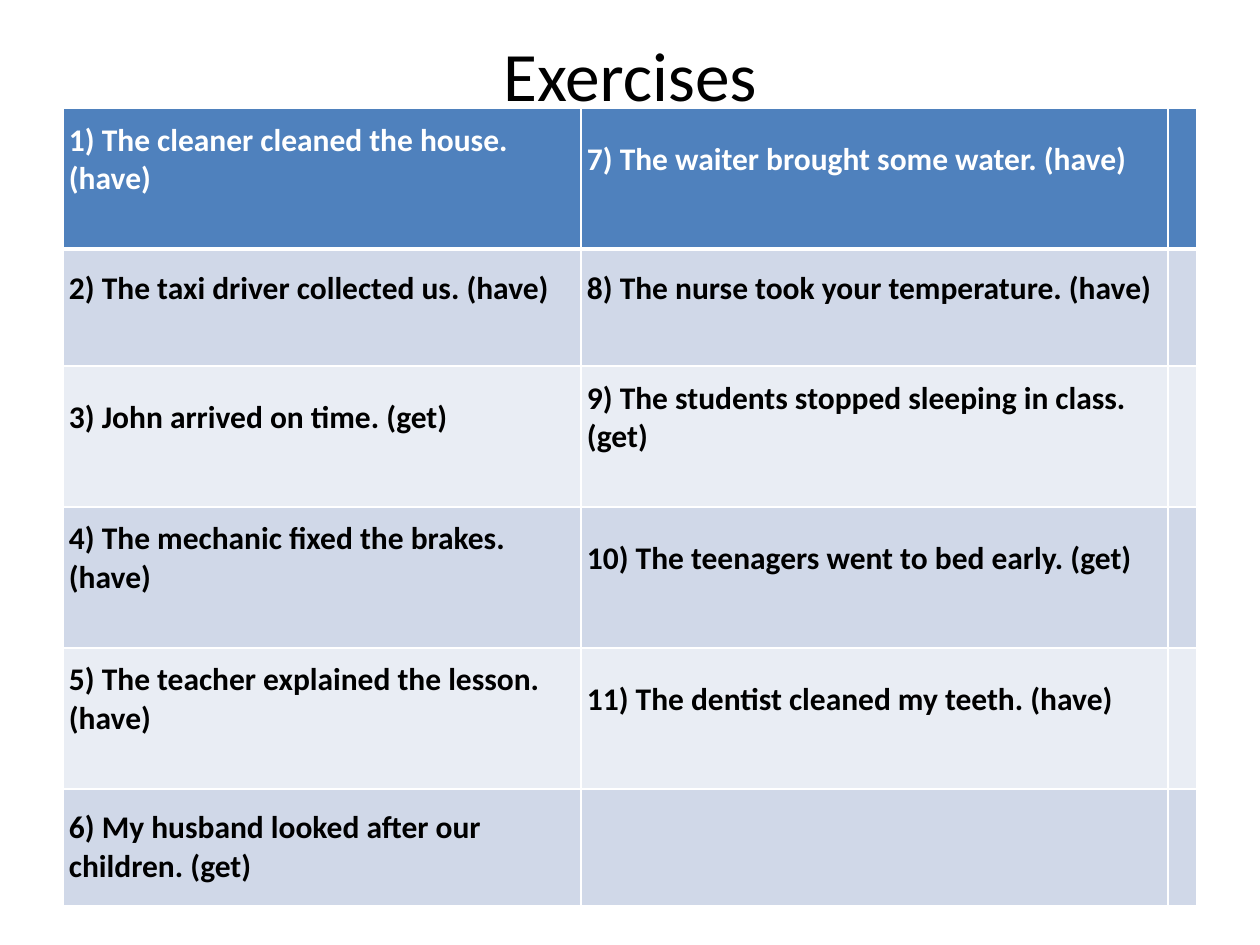
import lxml.etree
import pptx
import pptx.dml.color
import pptx.enum.text
import pptx.oxml.ns
import pptx.util

TITLE = "Exercises"
EXERCISES = [
    ("1) The cleaner cleaned the house. (have)", "7) The waiter brought some water. (have)", ""),
    ("2) The taxi driver collected us. (have)", "8) The nurse took your temperature. (have)", ""),
    ("3) John arrived on time. (get)", "9) The students stopped sleeping in class. (get)", ""),
    ("4) The mechanic fixed the brakes. (have)", "10) The teenagers went to bed early. (get)", ""),
    ("5) The teacher explained the lesson. (have)", "11) The dentist cleaned my teeth. (have)", ""),
    ("6) My husband looked after our children. (get)", "", ""),
]

# Lengths in px, 126 to the inch
SCALE = 914400 / 126
SLIDE_SIZE = (1260, 945)
TITLE_BOX = (63, 38, 1134, 71)
TABLE_LEFT, TABLE_TOP = 63, 108
COLUMN_WIDTHS = [518, 587, 29]
ROW_HEIGHTS = [141, 117, 141, 141, 141, 117]
CELL_MARGIN = 6
LINE_GAP = 38  # one line of free space below the text

BLACK = pptx.dml.color.RGBColor(0x00, 0x00, 0x00)
WHITE = pptx.dml.color.RGBColor(0xFF, 0xFF, 0xFF)
HEADER_BLUE = pptx.dml.color.RGBColor(0x4F, 0x81, 0xBD)
BANDS = [
    pptx.dml.color.RGBColor(0xE9, 0xED, 0xF4),
    pptx.dml.color.RGBColor(0xD0, 0xD8, 0xE8),
]


def px(length):
    return pptx.util.Emu(round(length * SCALE))


def write_text(frame, text, size, color, bold=False, alignment=pptx.enum.text.PP_ALIGN.LEFT):
    paragraph = frame.paragraphs[0]
    paragraph.alignment = alignment
    run = paragraph.add_run()
    run.text = text
    run.font.name = "Calibri"
    run.font.size = pptx.util.Pt(size)
    run.font.bold = bold
    run.font.color.rgb = color


def set_borders(cell, widths):
    """Give the cell white borders; widths maps side tags to points."""
    properties = cell._tc.get_or_add_tcPr()
    for index, (tag, width) in enumerate(widths.items()):
        line = lxml.etree.Element(pptx.oxml.ns.qn(f"a:{tag}"), w=str(pptx.util.Pt(width)))
        fill = lxml.etree.SubElement(line, pptx.oxml.ns.qn("a:solidFill"))
        lxml.etree.SubElement(fill, pptx.oxml.ns.qn("a:srgbClr"), val=str(WHITE))
        properties.insert(index, line)


def add_title(slide):
    title = slide.shapes.title
    title.left, title.top, title.width, title.height = map(px, TITLE_BOX)
    frame = title.text_frame
    frame.auto_size = pptx.enum.text.MSO_AUTO_SIZE.NONE
    frame.vertical_anchor = pptx.enum.text.MSO_ANCHOR.MIDDLE
    write_text(frame, TITLE, size=39.6, color=BLACK, alignment=pptx.enum.text.PP_ALIGN.CENTER)


def add_exercise_table(slide):
    table = slide.shapes.add_table(
        len(ROW_HEIGHTS), len(COLUMN_WIDTHS), px(TABLE_LEFT), px(TABLE_TOP),
        px(sum(COLUMN_WIDTHS)), px(sum(ROW_HEIGHTS)),
    ).table
    for column, width in zip(table.columns, COLUMN_WIDTHS):
        column.width = px(width)
    last_row = len(EXERCISES) - 1
    for row_index, texts in enumerate(EXERCISES):
        table.rows[row_index].height = px(ROW_HEIGHTS[row_index])
        is_header = row_index == 0
        for column_index, text in enumerate(texts):
            cell = table.cell(row_index, column_index)
            cell.fill.solid()
            cell.fill.fore_color.rgb = HEADER_BLUE if is_header else BANDS[row_index % 2]
            cell.vertical_anchor = pptx.enum.text.MSO_ANCHOR.MIDDLE
            cell.margin_left = cell.margin_right = cell.margin_top = px(CELL_MARGIN)
            cell.margin_bottom = px(CELL_MARGIN + (LINE_GAP if row_index < last_row else 0))
            set_borders(cell, {
                "lnL": 1, "lnR": 1,
                "lnT": 3 if row_index == 1 else 1,
                "lnB": 3 if is_header else 1,
            })
            if text:
                write_text(cell.text_frame, text, size=18, bold=True,
                           color=WHITE if is_header else BLACK)


def main():
    presentation = pptx.Presentation()
    presentation.slide_width, presentation.slide_height = map(px, SLIDE_SIZE)
    slide = presentation.slides.add_slide(presentation.slide_layouts[5])
    add_title(slide)
    add_exercise_table(slide)
    presentation.save("out.pptx")


if __name__ == "__main__":
    main()
